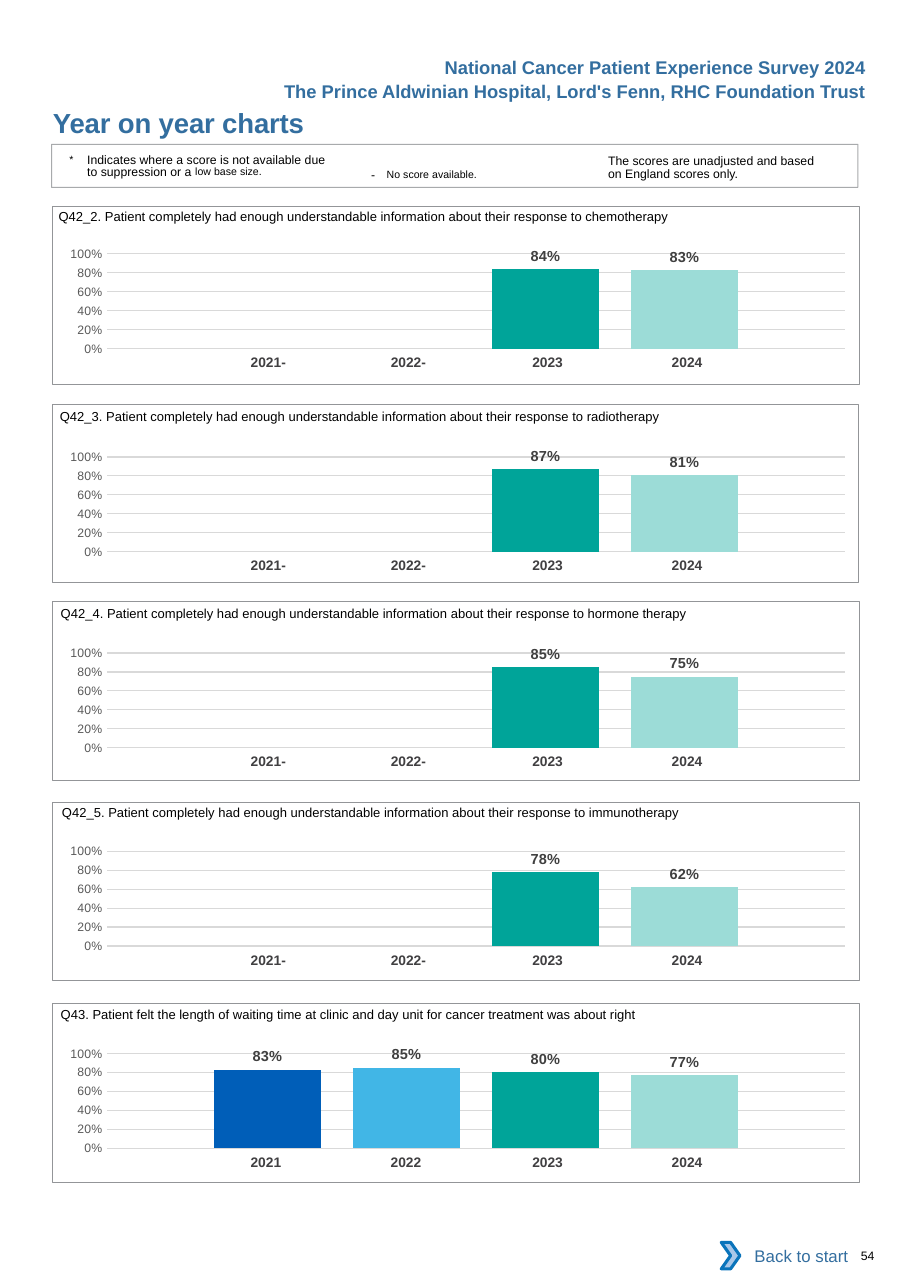
from lxml import etree
from pptx import Presentation
from pptx import util as u
from pptx.chart import data
from pptx.dml.color import RGBColor
from pptx.enum import chart as kinds
from pptx.enum import shapes, text
from pptx.oxml import ns

BLUE = RGBColor(0x33, 0x6E, 0x9F)
BLACK = RGBColor(0, 0, 0)
WHITE = RGBColor(0xFF, 0xFF, 0xFF)
FRAME_GREY = RGBColor(0x93, 0x95, 0x98)
GRID_GREY = RGBColor(0xD9, 0xD9, 0xD9)
AXIS_GREY = RGBColor(0x59, 0x59, 0x59)
LABEL_GREY = RGBColor(0x40, 0x40, 0x40)
YEAR_GREY = RGBColor(0x41, 0x40, 0x42)
ARROW_FILL = RGBColor(0xA8, 0xC7, 0xE9)
ARROW_LINE = RGBColor(0x0A, 0x74, 0xBB)
BAR_COLOURS = [RGBColor(0x00, 0x5E, 0xB8), RGBColor(0x41, 0xB6, 0xE6),
               RGBColor(0x00, 0xA4, 0x99), RGBColor(0x9C, 0xDC, 0xD7)]

YEARS = ["2021", "2022", "2023", "2024"]
YEAR_WIDTHS = [3.23, 3.23, 3.4, 3.23]
YEAR_RIGHT_MARGINS = [0, 0, 0.1, 0.3]
PLOT_LAYOUT = {"layoutTarget": "inner", "xMode": "edge", "yMode": "edge",
               "x": 0.079, "y": 0.145, "w": 0.915, "h": 0.666}
NO_GRID_STYLE = "{2D5ABB26-0587-4C30-8999-92F81FD0307C}"
RESPONSE = "Patient completely had enough understandable information about their response to "
WAITING = ("Patient felt the length of waiting time at clinic and day unit "
           "for cancer treatment was about right")

PANELS = [
    ("Q42_2. " + RESPONSE + "chemotherapy", (1.35, 4.57, 18.31, 0.61),
     1.22, 4.75, 5.38, (None, None, 0.84, 0.83)),
    ("Q42_3. " + RESPONSE + "radiotherapy", (1.38, 9.19, 17.98, 0.61),
     1.2, 9.32, 10.06, (None, None, 0.87, 0.81)),
    ("Q42_4. " + RESPONSE + "hormone therapy", (1.4, 13.72, 18.39, 0.61),
     1.22, 13.87, 14.58, (None, None, 0.85, 0.75)),
    ("Q42_5. " + RESPONSE + "immunotherapy", (1.43, 18.31, 18.44, 0.61),
     1.22, 18.49, 19.15, (None, None, 0.78, 0.62)),
    ("Q43. " + WAITING, (1.4, 22.97, 14.53, 0.61),
     1.22, 23.14, 23.81, (0.83, 0.85, 0.8, 0.77)),
]


def lengths(*values):
    return [u.Cm(value) for value in values]


def apply(target, values):
    for name, value in values.items():
        setattr(target, name, value)


def set_font(font, size, colour=BLACK, bold=False, name="Arial"):
    apply(font, {"name": name, "size": u.Pt(size), "bold": bold})
    font.color.rgb = colour


def set_margins(target, margins):
    sides = ("margin_left", "margin_top", "margin_right", "margin_bottom")
    apply(target, dict(zip(sides, lengths(*margins))))


def write(para, wording, size, colour=BLACK, bold=False, **extras):
    span = para.add_run()
    span.text = wording
    set_font(span.font, size, colour, bold)
    for name, value in extras.items():
        span.font._element.set(name, str(value))


def add_text(items, place, spans, margins=(0, 0, 0, 0), wrap=True, **para_format):
    box = items.add_textbox(*lengths(*place))
    box.text_frame.word_wrap = wrap
    set_margins(box.text_frame, margins)
    para = box.text_frame.paragraphs[0]
    apply(para, para_format)
    for wording, size, *rest in spans:
        write(para, wording, size, **(rest[0] if rest else {}))
    return para


def add_box(items, place, kind=shapes.MSO_SHAPE.RECTANGLE, fill=None, line=None, width=0.5):
    box = items.add_shape(kind, *lengths(*place))
    box.shadow.inherit = False
    if fill is None:
        box.fill.background()
    else:
        box.fill.solid()
        box.fill.fore_color.rgb = fill
    if line is None:
        box.line.fill.background()
    else:
        box.line.color.rgb = line
        box.line.width = u.Pt(width)
    return box


def add_title(page):
    title = page.shapes.title
    apply(title, dict(zip(("left", "top", "width", "height"), lengths(1.22, 2.44, 11.43, 0.76))))
    frame = title.text_frame
    set_margins(frame, (0, 0, 0, 0))
    apply(frame, {"vertical_anchor": text.MSO_ANCHOR.TOP, "auto_size": text.MSO_AUTO_SIZE.NONE})
    para = frame.paragraphs[0]
    para.alignment = text.PP_ALIGN.LEFT
    write(para, "Year on year charts", 18, BLUE, True, spc=-10)


def add_heading(page, wording, place):
    add_text(page.shapes, place, [(wording, 12, {"colour": BLUE, "bold": True})],
             (0.25, 0.13, 0.25, 0.13), False, alignment=text.PP_ALIGN.RIGHT)


def add_notes(page):
    items = page.shapes.add_group_shape().shapes
    tight = {"line_spacing": u.Pt(8.1)}
    add_text(items, (14.02, 3.51, 5.11, 0.69),
             [("The scores are unadjusted and based on England scores only.", 8)],
             (0, 0.08, 0, 0), **tight)
    add_text(items, (8.31, 3.58, 4.65, 0.61),
             [("- ", 8, {"spc": 260}), ("No score available.", 12, {"baseline": 3000})],
             (0.25, 0.13, 0.25, 0.13))
    para = add_text(items, (1.6, 3.51, 6.91, 0.33),
                    [("*\t", 12, {"baseline": 3000}),
                     ("Indicates where a score is not available due to suppression or a ", 8),
                     ("low base size.", 12, {"baseline": 7000})],
                    (0, 0.08, 0.81, 0), **tight)
    for name, value in {"marL": u.Cm(0.41), "indent": u.Cm(-0.41)}.items():
        para._p.get_or_add_pPr().set(name, str(value))
    frame = add_box(items, (1.19, 3.33, 18.59, 0.99), line=FRAME_GREY, width=0.75)
    colour = frame.line._ln.find(".//" + ns.qn("a:srgbClr"))
    etree.SubElement(colour, ns.qn("a:alpha")).set("val", "80000")


def add_years(page, top, scores):
    frame = page.shapes.add_table(1, len(YEARS), *lengths(4.39, top, sum(YEAR_WIDTHS), 0.69))
    table = frame.table
    apply(table, {"first_row": False, "horz_banding": False})
    table._tbl.tblPr.find(ns.qn("a:tableStyleId")).text = NO_GRID_STYLE
    for column, (year, score) in enumerate(zip(YEARS, scores)):
        table.columns[column].width = u.Cm(YEAR_WIDTHS[column])
        cell = table.cell(0, column)
        cell.fill.background()
        missing = score is None
        set_margins(cell, (0.36 if missing else 0.25, 0.13, YEAR_RIGHT_MARGINS[column], 0.13))
        para = cell.text_frame.paragraphs[0]
        para.alignment = text.PP_ALIGN.CENTER
        write(para, year + "-" if missing else year, 9, YEAR_GREY, True)


def set_plot_layout(chart):
    area = chart._chartSpace.chart.plotArea
    for old in area.findall(ns.qn("c:layout")):
        area.remove(old)
    layout = etree.Element(ns.qn("c:layout"))
    area.insert(0, layout)
    manual = etree.SubElement(layout, ns.qn("c:manualLayout"))
    for name, value in PLOT_LAYOUT.items():
        etree.SubElement(manual, ns.qn("c:" + name)).set("val", str(value))


def add_score_chart(page, top, scores):
    values = data.CategoryChartData(number_format="0%")
    values.categories = ["1"]
    for number, score in enumerate(scores, 1):
        values.add_series(f"Series {number}", [score])
    chart = page.shapes.add_chart(kinds.XL_CHART_TYPE.COLUMN_CLUSTERED,
                                  *lengths(1, top, 18.59, 3.28), values).chart
    apply(chart, {"has_legend": False, "has_title": False})
    set_font(chart.font, 10, name="Calibri")
    set_plot_layout(chart)
    chart.category_axis.visible = False
    axis = chart.value_axis
    apply(axis, {"minimum_scale": 0, "maximum_scale": 1, "major_unit": 0.2,
                 "major_tick_mark": kinds.XL_TICK_MARK.NONE, "has_major_gridlines": True})
    axis.format.line.fill.background()
    axis.major_gridlines.format.line.color.rgb = GRID_GREY
    axis.major_gridlines.format.line.width = u.Pt(0.75)
    percent = {"number_format": "0%", "number_format_is_linked": False}
    apply(axis.tick_labels, percent)
    set_font(axis.tick_labels.font, 8, AXIS_GREY)
    plot = chart.plots[0]
    apply(plot, {"gap_width": 200, "overlap": -30, "vary_by_categories": False})
    for series, colour in zip(plot.series, BAR_COLOURS):
        series.format.fill.solid()
        series.format.fill.fore_color.rgb = colour
        labels = series.data_labels
        apply(labels, {**percent, "show_value": True,
                       "position": kinds.XL_LABEL_POSITION.OUTSIDE_END})
        set_font(labels.font, 9.5, LABEL_GREY, True)


def add_panel(page, question, place, left, frame_top, chart_top, scores):
    add_text(page.shapes, place, [(question, 8.5)], (0, 0.23, 0, 0))
    add_years(page, chart_top + 2.68, scores)
    add_score_chart(page, chart_top, scores)
    add_box(page.shapes, (left, frame_top, 18.59, 4.11), line=FRAME_GREY)


def add_footer(page):
    add_text(page.shapes, (19.6, 28.77, 1.3, 0.33), [("54", 8)], (0.25, 0, 0, 0))
    items = page.shapes.add_group_shape().shapes
    button = add_box(items, (16.81, 28.41, 3, 1.07), fill=WHITE)
    button.text_frame.vertical_anchor = text.MSO_ANCHOR.MIDDLE
    para = button.text_frame.paragraphs[0]
    para.alignment = text.PP_ALIGN.RIGHT
    write(para, "Back to start", 11, BLUE)
    add_box(items, (16.63, 28.64, 0.43, 0.61), shapes.MSO_SHAPE.CHEVRON,
            ARROW_FILL, ARROW_LINE, 2)


def main():
    deck = Presentation()
    apply(deck, {"slide_width": u.Cm(20.98), "slide_height": u.Cm(29.69)})
    page = deck.slides.add_slide(deck.slide_layouts[5])
    add_title(page)
    for panel in PANELS:
        add_panel(page, *panel)
    add_notes(page)
    add_heading(page, "The Prince Aldwinian Hospital, Lord's Fenn, RHC Foundation Trust",
                (6.22, 1.73, 14, 0.76))
    add_heading(page, "National Cancer Patient Experience Survey 2024", (9.96, 1.16, 10.26, 0.76))
    add_footer(page)
    deck.save("out.pptx")


if __name__ == "__main__":
    main()
